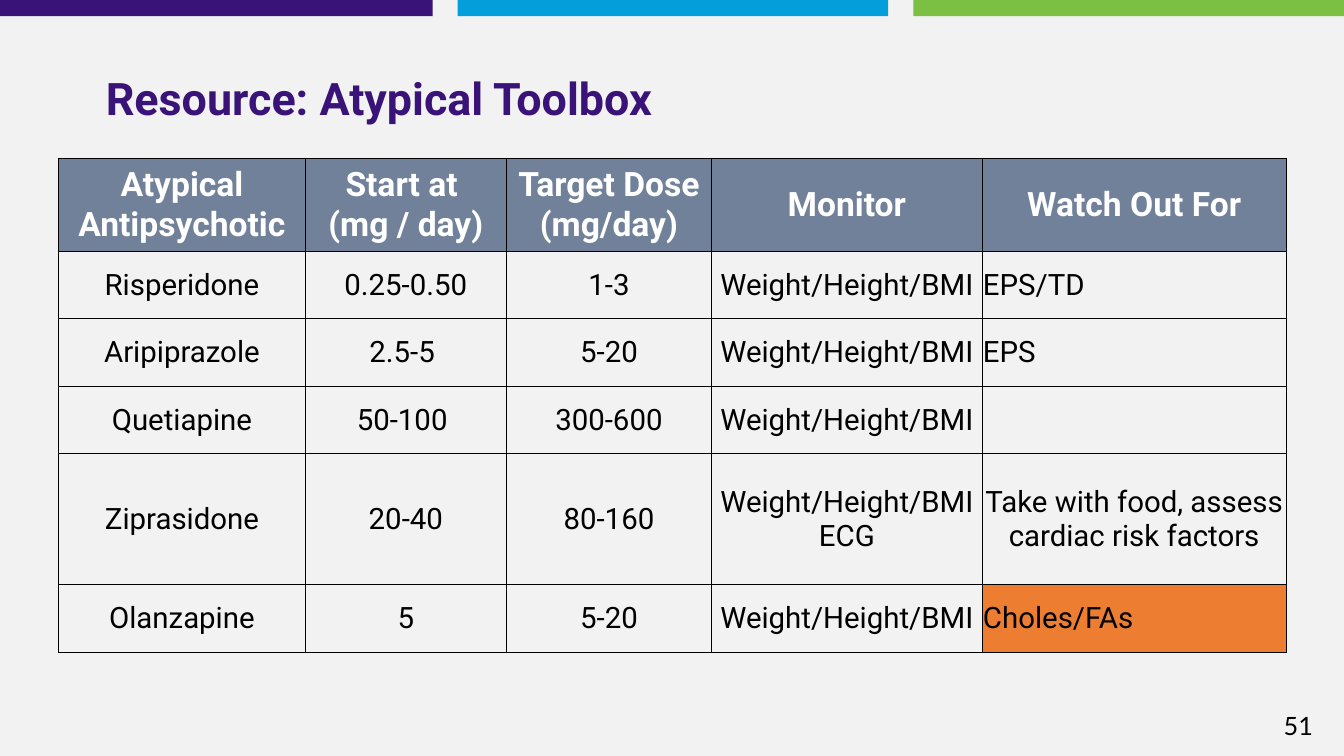
import dataclasses

import lxml.etree
import pptx
import pptx.dml.color
import pptx.enum.shapes
import pptx.enum.text
import pptx.oxml.ns
import pptx.util

Inches = pptx.util.Inches
Align = pptx.enum.text.PP_ALIGN
Anchor = pptx.enum.text.MSO_ANCHOR


@dataclasses.dataclass(frozen=True)
class Theme:
    background: str = "F2F2F2"
    purple: str = "391378"
    blue: str = "049FDA"
    green: str = "7BBF43"
    slate: str = "708199"
    orange: str = "ED7D31"
    black: str = "000000"
    white: str = "FFFFFF"
    font: str = "Roboto"
    number_font: str = "Lato"
    title_size: float = 32
    header_size: float = 24
    body_size: float = 21
    number_size: float = 18
    border_width: float = 0.75


class SlideBuilder:
    def __init__(self, slide, theme):
        self.slide = slide
        self.theme = theme
        self.paint(slide.background.fill, theme.background)

    def paint(self, fill, color):
        fill.solid()
        fill.fore_color.rgb = pptx.dml.color.RGBColor.from_string(color)

    def format_text(self, frame, size, color, align, bold=False, font=None):
        for paragraph in frame.paragraphs:
            paragraph.alignment = align
            for span in paragraph.runs:
                span.font.name = font or self.theme.font
                span.font.size = pptx.util.Pt(size)
                span.font.bold = bold
                span.font.color.rgb = pptx.dml.color.RGBColor.from_string(color)

    def bar(self, left, width, color):
        bar = self.slide.shapes.add_shape(
            pptx.enum.shapes.MSO_SHAPE.RECTANGLE,
            Inches(left), 0, Inches(width), Inches(0.16))
        bar.shadow.inherit = False
        bar.line.fill.background()
        self.paint(bar.fill, color)

    def title(self, text, left, top, width, height):
        title = self.slide.shapes.title
        title.left, title.top = Inches(left), Inches(top)
        title.width, title.height = Inches(width), Inches(height)
        frame = title.text_frame
        frame.text = text
        frame.vertical_anchor = Anchor.MIDDLE
        frame.margin_left = frame.margin_right = Inches(0.13)
        frame.margin_top = frame.margin_bottom = Inches(0.13)
        self.format_text(frame, self.theme.title_size, self.theme.purple,
                         Align.LEFT, bold=True)

    def page_number(self, text, left, top, width, height):
        box = self.slide.shapes.add_textbox(
            Inches(left), Inches(top), Inches(width), Inches(height))
        frame = box.text_frame
        frame.word_wrap = True
        frame.vertical_anchor = Anchor.MIDDLE
        frame.text = text
        self.format_text(frame, self.theme.number_size, self.theme.black,
                         Align.RIGHT, font=self.theme.number_font)

    def border(self, cell):
        properties = cell._tc.get_or_add_tcPr()
        for side in ("a:lnL", "a:lnR", "a:lnT", "a:lnB"):
            line = lxml.etree.SubElement(
                properties, pptx.oxml.ns.qn(side),
                w=str(pptx.util.Pt(self.theme.border_width)))
            fill = lxml.etree.SubElement(line, pptx.oxml.ns.qn("a:solidFill"))
            lxml.etree.SubElement(
                fill, pptx.oxml.ns.qn("a:srgbClr"), val=self.theme.black)

    def cell(self, cell, text, align, header, fill):
        cell.margin_left = cell.margin_right = cell.margin_top = Inches(0.01)
        cell.margin_bottom = 0
        cell.vertical_anchor = Anchor.MIDDLE
        self.border(cell)
        if fill:
            self.paint(cell.fill, fill)
        else:
            cell.fill.background()
        cell.text_frame.text = text
        size = self.theme.header_size if header else self.theme.body_size
        color = self.theme.white if header else self.theme.black
        self.format_text(cell.text_frame, size, color, align, bold=header)

    def table(self, rows, left, top, widths, heights, left_aligned, highlights):
        table = self.slide.shapes.add_table(
            len(rows), len(widths), Inches(left), Inches(top),
            Inches(sum(widths)), Inches(sum(heights))).table
        table.horz_banding = False
        for column, width in zip(table.columns, widths):
            column.width = Inches(width)
        for row, height in zip(table.rows, heights):
            row.height = Inches(height)
        for row_index, row in enumerate(rows):
            for column_index, text in enumerate(row):
                header = row_index == 0
                fill = self.theme.slate if header else highlights.get(text)
                align = Align.LEFT if text in left_aligned else Align.CENTER
                self.cell(table.cell(row_index, column_index),
                          text, align, header, fill)


def main():
    theme = Theme()
    deck = pptx.Presentation()
    deck.slide_width, deck.slide_height = Inches(13.33), Inches(7.5)
    page = SlideBuilder(deck.slides.add_slide(deck.slide_layouts[5]), theme)

    for left, width, color in ((0, 4.29, theme.purple),
                               (4.54, 4.27, theme.blue),
                               (9.06, 4.27, theme.green)):
        page.bar(left, width, color)
    page.page_number("51", 12.42, 7, 0.7, 0.4)
    page.title("Resource: Atypical Toolbox", 0.92, 0.56, 11.5, 0.81)

    monitor = "Weight/Height/BMI"
    rows = (
        ("Atypical Antipsychotic", "Start at \n(mg / day)",
         "Target Dose (mg/day)", "Monitor", "Watch Out For"),
        ("Risperidone", "0.25-0.50", "1-3", monitor, "EPS/TD"),
        ("Aripiprazole", "2.5-5 ", "5-20", monitor, "EPS"),
        ("Quetiapine", "50-100 ", "300-600", monitor, ""),
        ("Ziprasidone", "20-40", "80-160", monitor + " ECG",
         "Take with food, assess cardiac risk factors"),
        ("Olanzapine", "5", "5-20", monitor, "Choles/FAs"),
    )
    page.table(
        rows, 0.58, 1.57,
        widths=(2.45, 1.99, 2.04, 2.68, 3.02),
        heights=(0.92, 0.67, 0.67, 0.67, 1.3, 0.67),
        left_aligned=("EPS/TD", "EPS", "Choles/FAs"),
        highlights={"Choles/FAs": theme.orange})
    deck.save("out.pptx")


if __name__ == "__main__":
    main()
